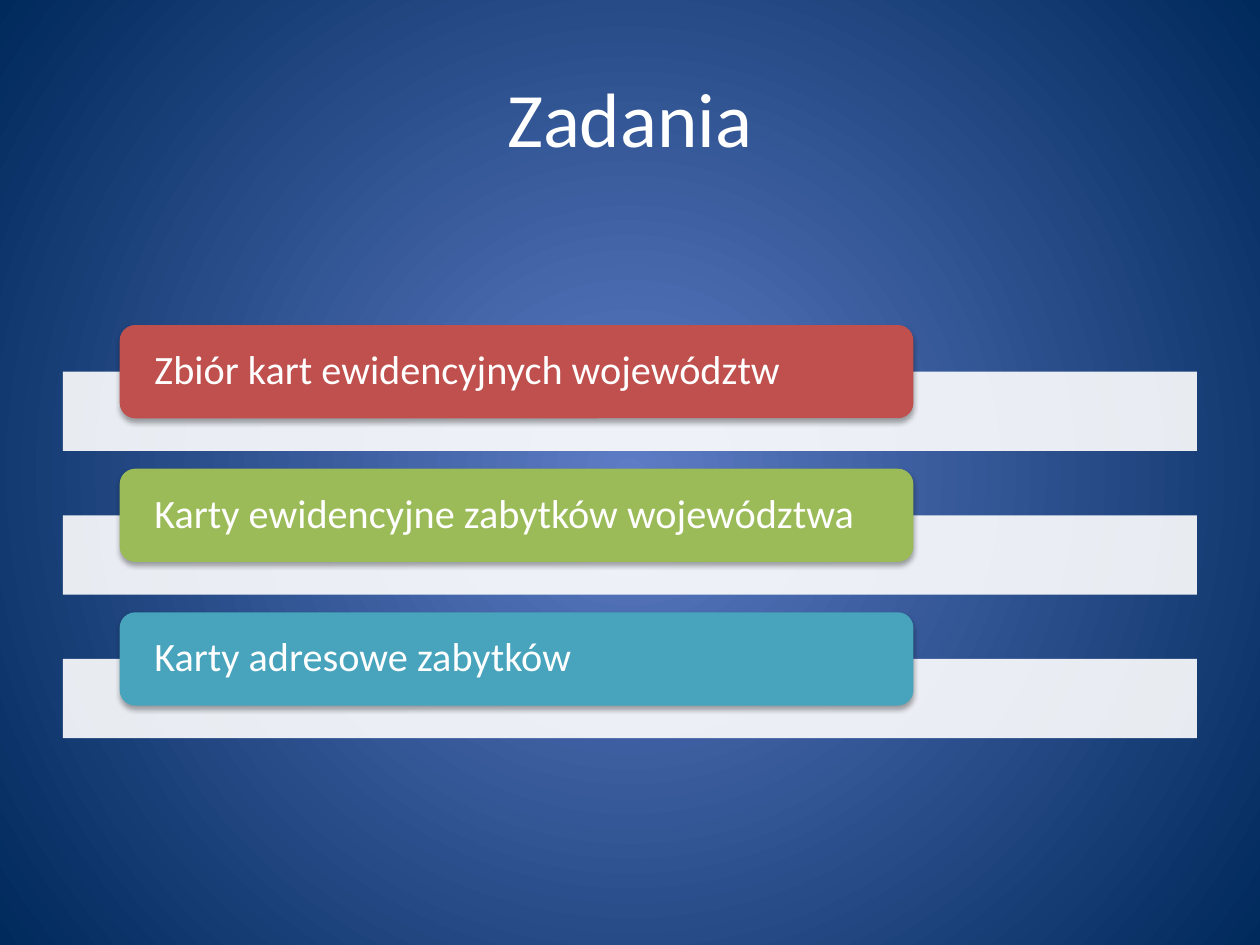
from lxml import etree
from pptx import Presentation
from pptx import util as u
from pptx.dml.color import RGBColor
from pptx.enum import shapes, text
from pptx.oxml import ns

WHITE = "FFFFFF"
TASKS = [
    ("Zbiór kart ewidencyjnych województw", "C0504D"),
    ("Karty ewidencyjne zabytków województwa", "9BBB59"),
    ("Karty adresowe zabytków", "47A4BC"),
]


def color(hex_string):
    return RGBColor.from_string(hex_string)


def add_child(parent, tag, **attributes):
    child = etree.SubElement(parent, ns.qn(tag))
    for name, value in attributes.items():
        child.set(name, str(value))
    return child


def paint_background(page, center, edge):
    fill = page.background.fill
    fill.gradient()
    for stop, position, shade in zip(fill.gradient_stops, (0, 1), (center, edge)):
        stop.position = position
        stop.color.rgb = color(shade)
    # Radial instead of linear
    gradient = page.element.find(".//" + ns.qn("a:gradFill"))
    gradient.remove(gradient.find(ns.qn("a:lin")))
    radial = add_child(gradient, "a:path", path="circle")
    add_child(radial, "a:fillToRect", l=50000, t=50000, r=50000, b=50000)


def add_block(page, kind, left, top, width, height, fill):
    block = page.shapes.add_shape(
        kind, u.Inches(left), u.Inches(top), u.Inches(width), u.Inches(height))
    block.fill.solid()
    block.fill.fore_color.rgb = color(fill)
    block.line.fill.background()
    block.shadow.inherit = False
    return block


def write_text(box, words, size, align, margin):
    frame = box.text_frame
    frame.word_wrap = True
    frame.vertical_anchor = text.MSO_ANCHOR.MIDDLE
    frame.margin_left = frame.margin_right = u.Inches(margin)
    frame.margin_top = frame.margin_bottom = 0
    para = frame.paragraphs[0]
    para.alignment = align
    span = para.add_run()
    span.text = words
    span.font.name = "Calibri"
    span.font.size = u.Pt(size)
    span.font.color.rgb = color(WHITE)
    return para


def add_title(page, left, top, width, height):
    box = page.shapes.add_textbox(
        u.Inches(left), u.Inches(top), u.Inches(width), u.Inches(height))
    write_text(box, "Zadania", 44, text.PP_ALIGN.CENTER, 0.1)


def add_task(page, left, top, width, words, fill):
    # Translucent bar behind the label
    bar = add_block(page, shapes.MSO_SHAPE.RECTANGLE,
                    left, top + 0.37, width, 0.63, WHITE)
    bar_color = bar.element.spPr.find(".//" + ns.qn("a:srgbClr"))
    add_child(bar_color, "a:alpha", val=90000)

    # Rounded label with a soft shadow below
    label = add_block(page, shapes.MSO_SHAPE.ROUNDED_RECTANGLE,
                      left + width * 0.05, top, width * 0.7, 0.74, fill)
    effects = label.element.spPr.find(ns.qn("a:effectLst"))
    shadow = add_child(effects, "a:outerShdw", blurRad=u.Pt(3.1), dist=u.Pt(2),
                       dir=90 * 60000, rotWithShape=0)
    add_child(add_child(shadow, "a:srgbClr", val="000000"), "a:alpha", val=35000)
    para = write_text(label, words, 23, text.PP_ALIGN.LEFT, 0.24)
    para.line_spacing = 0.9


def add_task_list(page, left, top, width, pitch):
    for index, (words, fill) in enumerate(TASKS):
        add_task(page, left, top + index * pitch, width, words, fill)


def main():
    deck = Presentation()
    deck.slide_width, deck.slide_height = u.Inches(10), u.Inches(7.5)
    page = deck.slides.add_slide(deck.slide_layouts[6])
    paint_background(page, "5E7CC5", "00295C")
    add_title(page, 0.5, 0.3, 9, 1.25)
    add_task_list(page, 0.5, 2.58, 9, 1.14)
    deck.save("out.pptx")


if __name__ == "__main__":
    main()
